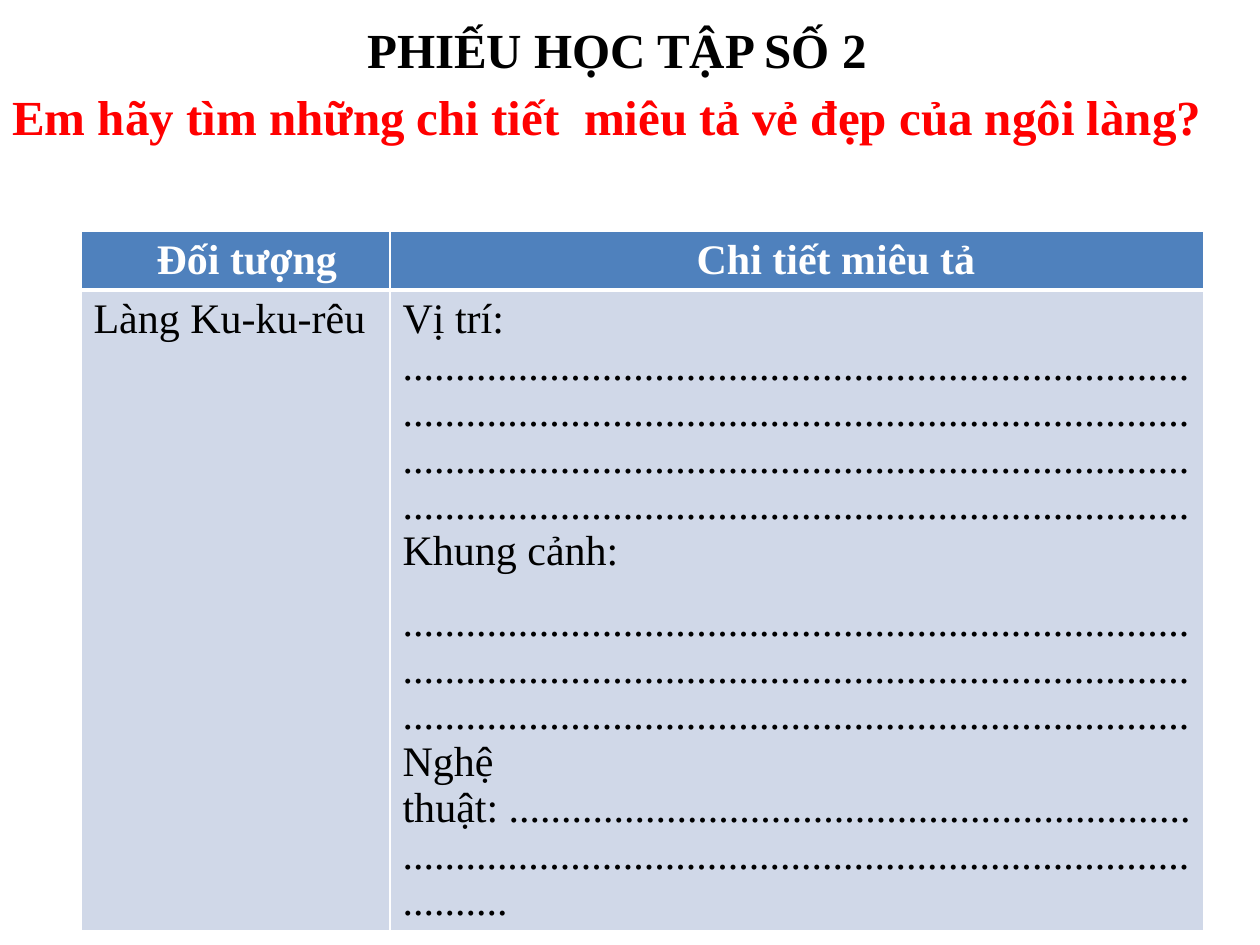
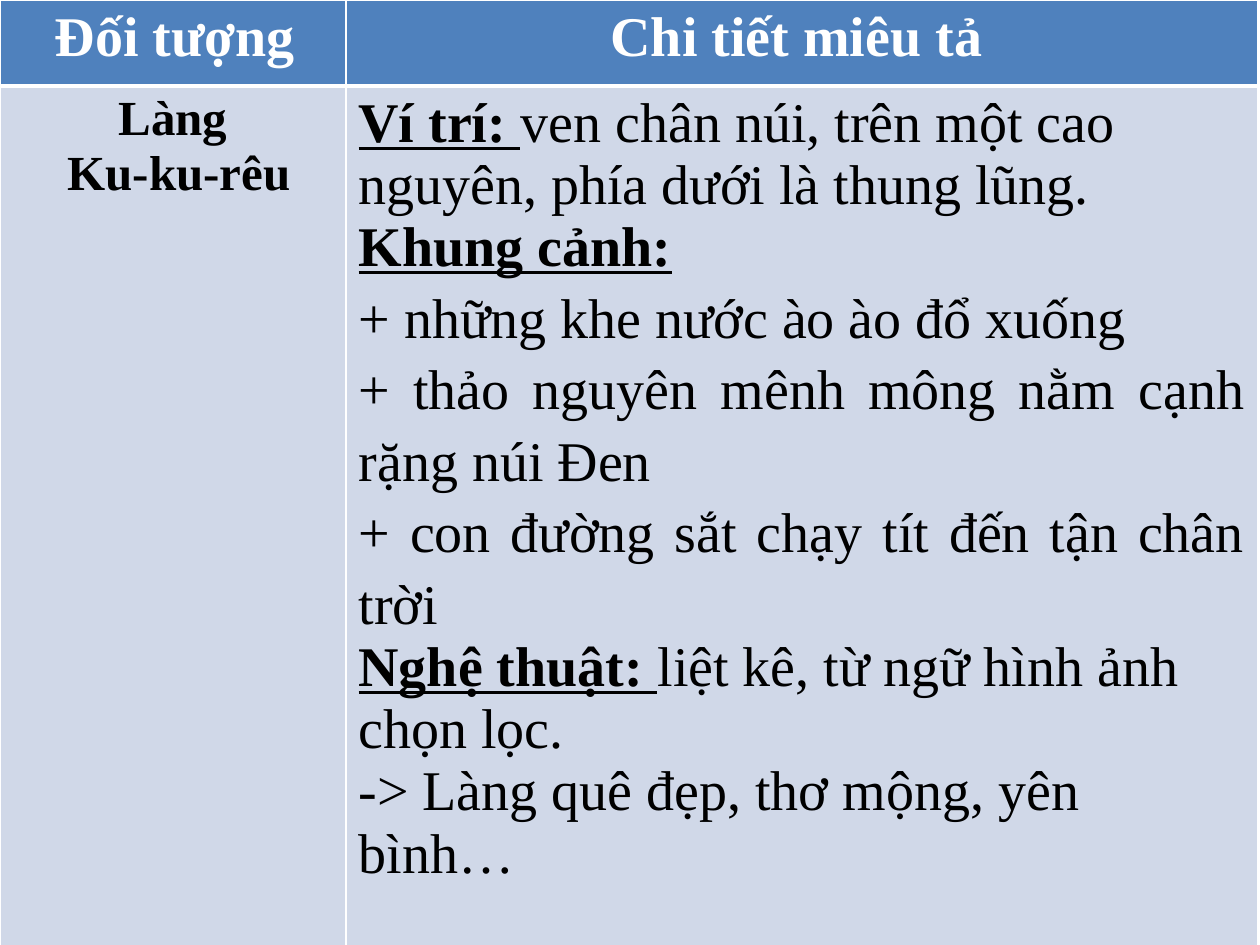
from lxml import etree
from pptx import Presentation
from pptx import util as u
from pptx.dml.color import RGBColor
from pptx.enum import text
from pptx.oxml.ns import qn

FONT = "Times New Roman"
BLACK, WHITE, RED = "000000", "FFFFFF", "FF0000"
BLUE, PALE = "4F81BD", "D0D8E8"
JUST, MID = text.PP_ALIGN.JUSTIFY, text.PP_ALIGN.CENTER
NBSP = chr(160)


def px(n):
    return u.Emu(round(n * 914400 / 126))


def write(frame, paras, size, color, bold=False):
    """Fill frame from (format, runs); a run is (text, font changes), indent is in px."""
    for i, (form, runs) in enumerate(paras):
        para = frame.paragraphs[0] if i == 0 else frame.add_paragraph()
        for key, val in form.items():
            if key == "indent":
                para._p.get_or_add_pPr().set("marL", str(px(val)))
            else:
                setattr(para, key, val)
        for words, change in runs:
            run = para.add_run()
            run.text = words
            look = {"name": FONT, "size": u.Pt(size), "bold": bold, "color": color}
            look.update(change)
            run.font.color.rgb = RGBColor.from_string(look.pop("color"))
            for key, val in look.items():
                setattr(run.font, key, val)


def plain(words, **form):
    return form, [(words, {})]


def label(head, rest=""):
    runs = [(head, {"bold": True, "underline": True})]
    return {}, runs + ([(rest, {})] if rest else [])


wide = {"alignment": JUST, "line_spacing": 1.15}

# Per slide: place, column widths, row heights, header size and indents,
# name cell (paragraphs, size, bold), detail cell (paragraphs, size)
sheets = [
    dict(
        at=(81, 231), cols=(309, 814), rows=(57, 639), size=24, pads=(63, 294),
        name=([plain("Làng Ku-ku-rêu")], 24, False),
        detail=[
            plain("Vị trí:"),
            plain("." * 300),
            plain("Khung cảnh:"),
            plain("." * 225 + f" Nghệ thuật:{NBSP}" + "." * 150, space_before=u.Pt(14)),
        ],
    ),
    dict(
        at=(0, 0), cols=(346, 912), rows=(86, 804), size=32, pads=(42, 252),
        name=([plain("Làng", alignment=MID), plain(" Ku-ku-rêu", alignment=MID)], 28, True),
        detail=[
            label("Ví trí: ", "ven chân núi, trên một cao nguyên, phía dưới là thung lũng."),
            label("Khung cảnh:"),
            plain("+ những khe nước ào ào đổ xuống", **wide),
            plain("+ thảo nguyên mênh mông nằm cạnh rặng núi Đen", **wide),
            plain("+ con đường sắt chạy tít đến tận chân trời", **wide),
            label("Nghệ thuật: ", "liệt kê, từ ngữ hình ảnh chọn lọc."),
            plain("-> Làng quê đẹp, thơ mộng, yên bình…"),
        ],
    ),
]
heads = ("Đối tượng", "Chi tiết miêu tả")

deck = Presentation()
deck.slide_width, deck.slide_height = px(1260), px(945)

for sheet in sheets:
    slide = deck.slides.add_slide(deck.slide_layouts[6])
    cols, rows, size = sheet["cols"], sheet["rows"], sheet["size"]
    box = (*sheet["at"], sum(cols), sum(rows))
    table = slide.shapes.add_table(2, 2, *map(px, box)).table
    for col, width in zip(table.columns, cols):
        col.width = px(width)
    for row, height in zip(table.rows, rows):
        row.height = px(height)

    for r in range(2):
        for c in range(2):
            cell = table.cell(r, c)
            props = cell._tc.get_or_add_tcPr()
            for side in "LRTB":
                thick = 3 if (r, side) in ((0, "B"), (1, "T")) else 1
                line = etree.SubElement(props, qn(f"a:ln{side}"), w=str(u.Pt(thick)))
                fill = etree.SubElement(line, qn("a:solidFill"))
                etree.SubElement(fill, qn("a:srgbClr"), val=WHITE)
            cell.fill.solid()
            cell.fill.fore_color.rgb = RGBColor.from_string(PALE if r else BLUE)

    for c, (head, pad) in enumerate(zip(heads, sheet["pads"])):
        write(table.cell(0, c).text_frame, [plain(head, indent=pad)], size, WHITE, True)
    paras, small, bold = sheet["name"]
    write(table.cell(1, 0).text_frame, paras, small, BLACK, bold)
    write(table.cell(1, 1).text_frame, sheet["detail"], size, BLACK)

title = deck.slides[0].shapes.add_textbox(*map(px, (0, 4, 1260, 144))).text_frame
title.word_wrap = True
title.auto_size = text.MSO_AUTO_SIZE.SHAPE_TO_FIT_TEXT
ask = "Em hãy tìm những chi tiết  miêu tả vẻ đẹp của ngôi làng?"
write(title, [
    plain("PHIẾU HỌC TẬP SỐ 2", indent=355, line_spacing=1.15),
    (wide, [(ask, {"color": RED})]),
], 28, BLACK, True)

deck.save("out.pptx")
